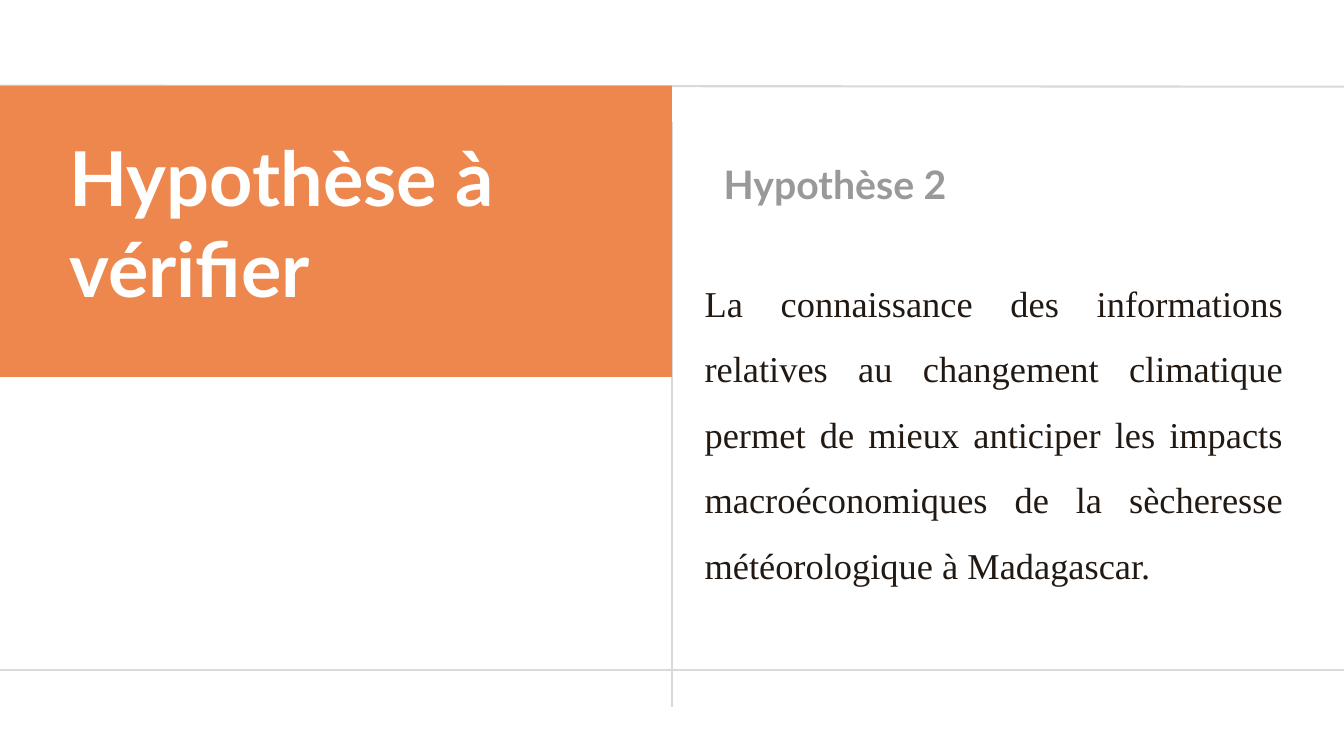
from lxml import etree
from pptx import Presentation
from pptx import util as u
from pptx.dml.color import RGBColor
from pptx.enum import shapes, text
from pptx.oxml import ns

ORANGE = RGBColor(0xED, 0x87, 0x4E)
WHITE = RGBColor(0xFF, 0xFF, 0xFF)
RULE = RGBColor(0xD9, 0xD9, 0xD9)
GREY = RGBColor(0x99, 0x99, 0x99)
INK = RGBColor(0x22, 0x19, 0x13)

WIDE, HIGH = 13.33, 7.5
MID = WIDE / 2
TOP, BASE = 0.85, 6.65
DROP = 0.36

deck = Presentation()
deck.slide_width, deck.slide_height = u.Inches(WIDE), u.Inches(HIGH)
slide = deck.slides.add_slide(deck.slide_layouts[6])


def write(words, left, top, width, height, size, color, font="Lato",
          bold=False, align=text.PP_ALIGN.LEFT, space=1.0):
    box = slide.shapes.add_textbox(*map(u.Inches, (left, top, width, height)))
    frame = box.text_frame
    frame.word_wrap = True
    para = frame.paragraphs[0]
    para.alignment = align
    para.line_spacing = space
    run = para.add_run()
    run.text = words
    run.font.name = font
    run.font.size = u.Pt(size)
    run.font.bold = bold
    run.font.color.rgb = color


rules = [
    (0, TOP, WIDE, TOP + 0.01),
    (0, BASE, WIDE, BASE),
    (MID, BASE + DROP, MID, TOP + DROP),
]
for ends in rules:
    line = slide.shapes.add_connector(
        shapes.MSO_CONNECTOR.STRAIGHT, *map(u.Inches, ends))
    line.line.color.rgb = RULE
    line.line.width = u.Pt(1.5)
    etree.SubElement(line.element.spPr, ns.qn("a:effectLst"))

panel = slide.shapes.add_shape(
    shapes.MSO_SHAPE.RECTANGLE, 0, u.Inches(TOP), u.Inches(MID), u.Inches(2.89))
panel.shadow.inherit = False
panel.fill.solid()
panel.fill.fore_color.rgb = ORANGE
panel.line.fill.background()

write("Hypothèse à vérifier", 0.59, 1.25, 5.49, 1.9, 54, WHITE, bold=True)
write("Hypothèse 2", 7.08, 1.54, 4.93, 0.57, 28, GREY, bold=True)
write("La connaissance des informations relatives au changement climatique "
      "permet de mieux anticiper les impacts macroéconomiques de la "
      "sècheresse météorologique à Madagascar.",
      6.89, 2.52, 5.94, 3.35, 26, INK, font="Times New Roman",
      align=text.PP_ALIGN.JUSTIFY, space=1.5)

deck.save("out.pptx")
